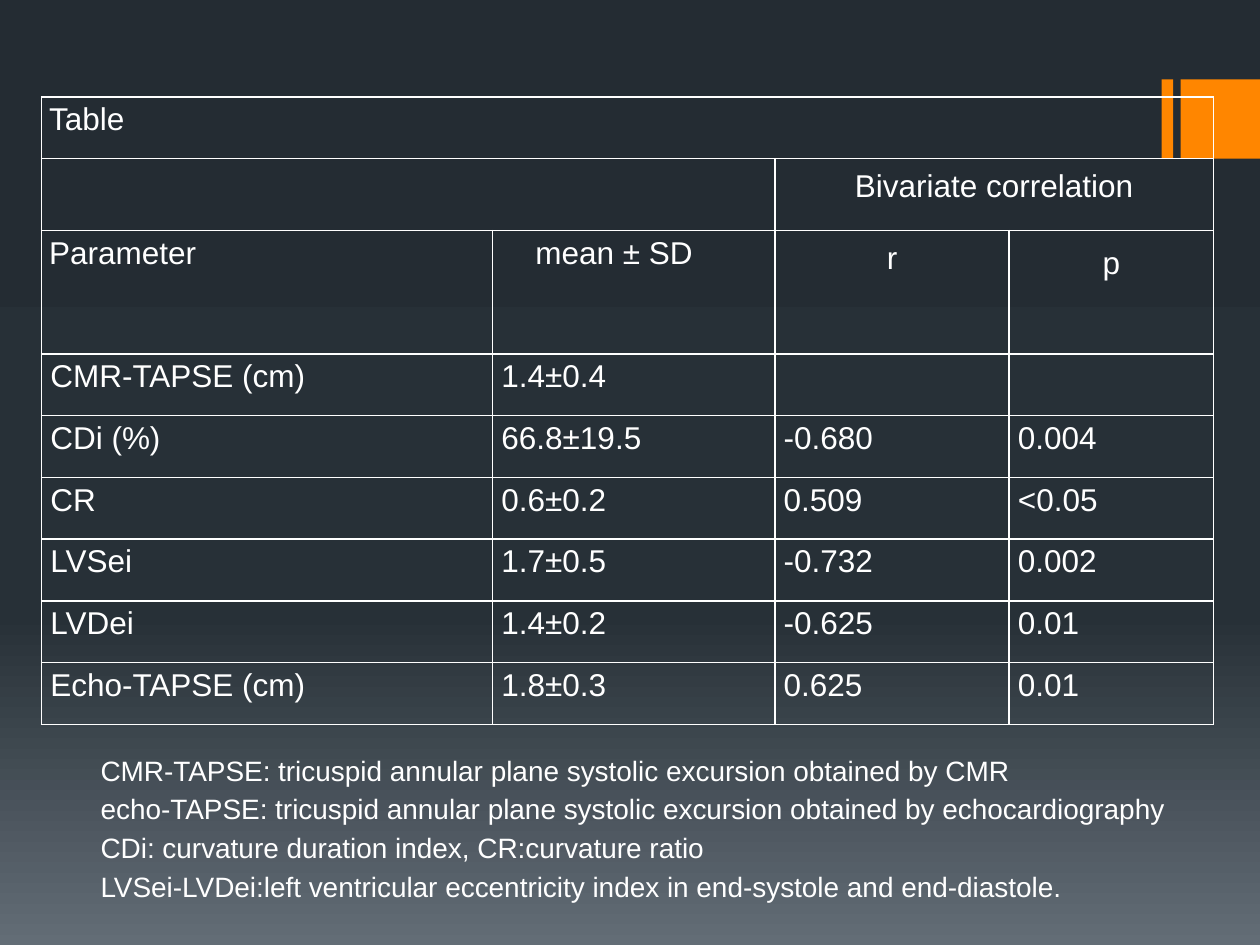
from copy import deepcopy

from lxml.etree import SubElement
from pptx import Presentation
from pptx.dml.color import RGBColor
from pptx.enum.shapes import MSO_SHAPE
from pptx.enum.text import MSO_AUTO_SIZE, PP_ALIGN
from pptx.oxml.ns import qn
from pptx.util import Inches, Pt

COLORS = {
    "text": "FFFFFF",
    "border": "FFFFFF",
    "accent": "FF8600",
    "sky": "242C33",
    "middle": "273037",
    "ground": "636D76",
}
FONT = "Arial"
COLUMN_WIDTHS = [3.58, 2.24, 1.86, 1.62]
ROW_HEIGHTS = [0.49, 0.57, 0.98] + [0.49] * 6
MEASUREMENTS = [
    ("CMR-TAPSE (cm)", "1.4±0.4", "", ""),
    ("CDi (%)", "66.8±19.5", "-0.680", "0.004"),
    ("CR", "0.6±0.2", "0.509", "<0.05"),
    ("LVSei", "1.7±0.5", "-0.732", "0.002"),
    ("LVDei", "1.4±0.2", "-0.625", "0.01"),
    ("Echo-TAPSE (cm)", "1.8±0.3", "0.625", "0.01"),
]
ABBREVIATIONS = [
    "CMR-TAPSE: tricuspid annular plane systolic excursion obtained by CMR",
    "echo-TAPSE: tricuspid annular plane systolic excursion obtained by echocardiography",
    "CDi: curvature duration index, CR:curvature ratio",
    "LVSei-LVDei:left ventricular eccentricity index in end-systole and end-diastole.",
]


def write_text(paragraph, text, size=18, align=PP_ALIGN.JUSTIFY, spacing=1.15):
    paragraph.alignment = align
    paragraph.line_spacing = spacing
    run = paragraph.add_run()
    run.text = text
    run.font.size = Pt(size)
    run.font.name = FONT
    run.font.color.rgb = RGBColor.from_string(COLORS["text"])


def paint_background(slide):
    fill = slide.background.fill
    fill.gradient()
    fill.gradient_angle = 270
    stop_list = slide.element.find(".//" + qn("a:gsLst"))
    stop_list.insert(1, deepcopy(stop_list[0]))
    for stop, name, position in zip(
        fill.gradient_stops, ("sky", "middle", "ground"), (0, 0.65, 1)
    ):
        stop.color.rgb = RGBColor.from_string(COLORS[name])
        stop.position = position


def add_accent(slide, left, top, width, height):
    bar_width, gap = 0.09, 0.06
    block_left = bar_width + gap
    for offset, part_width in ((0, bar_width), (block_left, width - block_left)):
        block = slide.shapes.add_shape(
            MSO_SHAPE.RECTANGLE,
            Inches(left + offset), Inches(top), Inches(part_width), Inches(height),
        )
        block.shadow.inherit = False
        block.fill.solid()
        block.fill.fore_color.rgb = RGBColor.from_string(COLORS["accent"])
        block.line.fill.background()


def outline_cell(cell):
    properties = cell._tc.get_or_add_tcPr()
    for side in ("a:lnL", "a:lnR", "a:lnT", "a:lnB"):
        line = SubElement(properties, qn(side), w=str(Pt(1)))
        solid = SubElement(line, qn("a:solidFill"))
        SubElement(solid, qn("a:srgbClr"), val=COLORS["border"])
    cell.fill.background()


def fill_cell(cell, text, side=0.07, vertical=0, left=None, **text_format):
    cell.margin_left = Inches(side if left is None else left)
    cell.margin_right = Inches(side)
    cell.margin_top = cell.margin_bottom = Inches(vertical)
    write_text(cell.text_frame.paragraphs[0], text, **text_format)


def add_correlation_table(slide, left, top, width, height):
    table = slide.shapes.add_table(
        len(ROW_HEIGHTS), len(COLUMN_WIDTHS),
        Inches(left), Inches(top), Inches(width), Inches(height),
    ).table
    table.first_row = table.horz_banding = False
    for column, column_width in zip(table.columns, COLUMN_WIDTHS):
        column.width = Inches(column_width)
    for row, row_height in zip(table.rows, ROW_HEIGHTS):
        row.height = Inches(row_height)
        for cell in row.cells:
            outline_cell(cell)

    table.cell(0, 0).merge(table.cell(0, 3))
    table.cell(1, 0).merge(table.cell(1, 1))
    table.cell(1, 2).merge(table.cell(1, 3))

    centred = {"side": 0.08, "vertical": 0.08, "align": PP_ALIGN.CENTER}
    fill_cell(table.cell(0, 0), "Table", side=0.06)
    fill_cell(table.cell(1, 2), "Bivariate correlation", spacing=1, **centred)
    fill_cell(table.cell(2, 0), "Parameter", side=0.06)
    fill_cell(table.cell(2, 1), "mean ± SD", side=0.06, left=0.34)
    fill_cell(table.cell(2, 2), "r", spacing=1, **centred)
    fill_cell(table.cell(2, 3), "p", **centred)
    for row_index, measurement in enumerate(MEASUREMENTS, start=3):
        for column_index, value in enumerate(measurement):
            if value:
                fill_cell(table.cell(row_index, column_index), value)


def add_abbreviations(slide, left, top, width, height):
    frame = slide.shapes.add_textbox(
        Inches(left), Inches(top), Inches(width), Inches(height)
    ).text_frame
    frame.word_wrap = True
    frame.auto_size = MSO_AUTO_SIZE.SHAPE_TO_FIT_TEXT
    for index, abbreviation in enumerate(ABBREVIATIONS):
        paragraph = frame.add_paragraph() if index else frame.paragraphs[0]
        write_text(paragraph, abbreviation, size=16)


def main():
    presentation = Presentation()
    presentation.slide_width = Inches(10)
    presentation.slide_height = Inches(7.5)
    slide = presentation.slides.add_slide(presentation.slide_layouts[6])
    paint_background(slide)
    add_accent(slide, 9.22, 0.63, 0.78, 0.63)
    add_correlation_table(slide, 0.33, 0.77, sum(COLUMN_WIDTHS), sum(ROW_HEIGHTS))
    add_abbreviations(slide, 0.7, 5.89, 8.94, 1.33)
    presentation.save("out.pptx")


if __name__ == "__main__":
    main()
